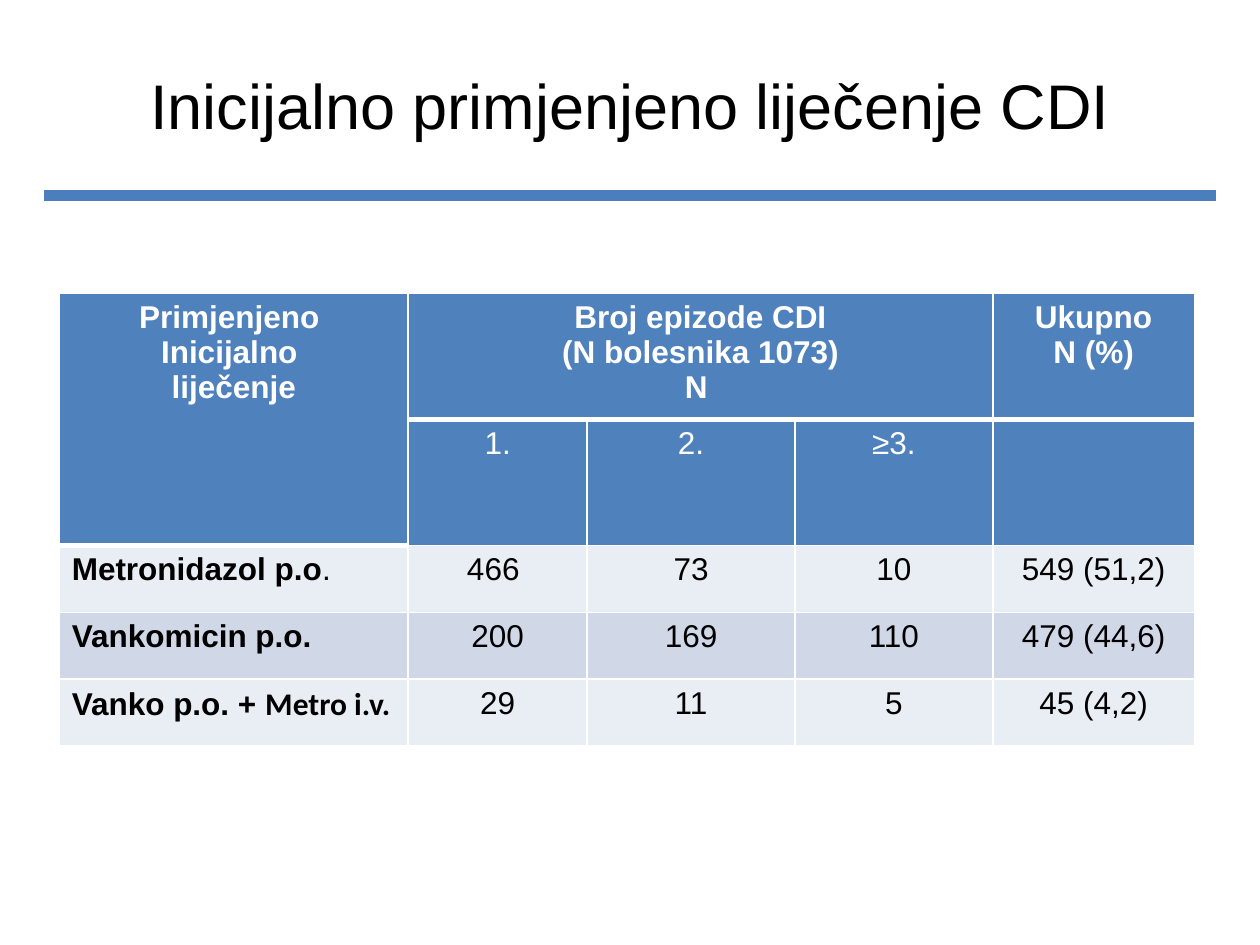
from lxml.etree import SubElement
from pptx import Presentation
from pptx.dml.color import RGBColor
from pptx.enum.shapes import MSO_CONNECTOR
from pptx.enum.text import MSO_ANCHOR, PP_ALIGN
from pptx.oxml.ns import qn
from pptx.util import Inches, Pt

# Content
TITLE = "Inicijalno primjenjeno liječenje CDI"
HEADERS = {
    0: ["Primjenjeno ", "Inicijalno ", "liječenje"],
    1: ["Broj epizode CDI", "(N bolesnika 1073)", "N "],
    4: ["Ukupno", "N (%)"],
}
EPISODES = ["1.", "2.", "≥3.", ""]
# Each treatment is a list of (text, bold, font) runs
TREATMENTS = [
    ([("Metronidazol p.o", True, "Arial"), (".", False, "Arial")],
     ["466 ", "73", "10", "549 (51,2)"]),
    ([("Vankomicin p.o.", True, "Arial")],
     ["200", "169", "110", "479 (44,6)"]),
    ([("Vanko p.o. + ", True, "Arial"), ("Metro i.v.", True, "Calibri")],
     ["29", "11", "5", "45 (4,2)"]),
]
COLORS = {"rule": "4B7EBC", "header": "4F81BD", "odd": "E9EDF4",
          "even": "D0D8E8", "white": "FFFFFF", "black": "000000"}
COLUMN_WIDTHS = [2.77, 1.42, 1.65, 1.57, 1.6]
ROW_HEIGHTS = [0.93] * 2 + [0.53] * len(TREATMENTS)


def rgb(name):
    return RGBColor.from_string(COLORS[name])


def set_font(font, size, color, bold=False, name="Arial"):
    font.size, font.bold, font.name = Pt(size), bold, name
    font.color.rgb = rgb(color)


def write_lines(cell, lines, color, bold=False):
    frame = cell.text_frame
    for i, line in enumerate(lines):
        paragraph = frame.paragraphs[0] if i == 0 else frame.add_paragraph()
        paragraph.text = line
        paragraph.alignment = PP_ALIGN.CENTER
        set_font(paragraph.font, 18, color, bold)


def style_cell(cell, fill, top, bottom):
    properties = cell._tc.get_or_add_tcPr()
    for side, points in (("L", 1), ("R", 1), ("T", top), ("B", bottom)):
        border = SubElement(properties, qn(f"a:ln{side}"), w=str(Pt(points)))
        solid = SubElement(border, qn("a:solidFill"))
        SubElement(solid, qn("a:srgbClr"), val=COLORS["white"])
    cell.fill.solid()
    cell.fill.fore_color.rgb = rgb(fill)


prs = Presentation()
prs.slide_width, prs.slide_height = Inches(10), Inches(7.5)
slide = prs.slides.add_slide(prs.slide_layouts[6])

# Rule under the title
rule = slide.shapes.add_connector(
    MSO_CONNECTOR.STRAIGHT, Inches(0.35), Inches(1.55), Inches(9.65), Inches(1.55))
rule.line.color.rgb = rgb("rule")
rule.line.width = Pt(6)
SubElement(rule._element.spPr, qn("a:effectLst"))

# Title
title = slide.shapes.add_textbox(
    Inches(0.5), Inches(0.3), Inches(9), Inches(1.25)).text_frame
title.word_wrap = True
title.vertical_anchor = MSO_ANCHOR.MIDDLE
title.margin_bottom = Inches(0.25)
heading = title.paragraphs[0]
heading.text = TITLE
heading.alignment = PP_ALIGN.CENTER
set_font(heading.font, 36, "black")

# Table grid
table = slide.shapes.add_table(
    len(ROW_HEIGHTS), len(COLUMN_WIDTHS), Inches(0.47), Inches(2.33),
    Inches(sum(COLUMN_WIDTHS)), Inches(sum(ROW_HEIGHTS))).table
for column, width in zip(table.columns, COLUMN_WIDTHS):
    column.width = Inches(width)
for row, height in zip(table.rows, ROW_HEIGHTS):
    row.height = Inches(height)
table.cell(0, 0).merge(table.cell(1, 0))
table.cell(0, 1).merge(table.cell(0, 3))

# Fills and borders, with a thick line below each top header cell
for r in range(len(ROW_HEIGHTS)):
    fill = "header" if r < 2 else ("odd", "even")[r % 2]
    for c in range(len(COLUMN_WIDTHS)):
        header_end = 2 if c == 0 else 1
        style_cell(table.cell(r, c), fill,
                   top=3 if r == header_end else 1,
                   bottom=3 if r < header_end else 1)

# Header text
for c, lines in HEADERS.items():
    write_lines(table.cell(0, c), lines, "white", bold=True)
for c, episode in enumerate(EPISODES, 1):
    write_lines(table.cell(1, c), [episode], "white")

# Treatment rows
for r, (treatment, counts) in enumerate(TREATMENTS, 2):
    label = table.cell(r, 0).text_frame.paragraphs[0]
    for text, bold, font_name in treatment:
        run = label.add_run()
        run.text = text
        set_font(run.font, 18, "black", bold, font_name)
    for c, count in enumerate(counts, 1):
        write_lines(table.cell(r, c), [count], "black")

prs.save("out.pptx")
